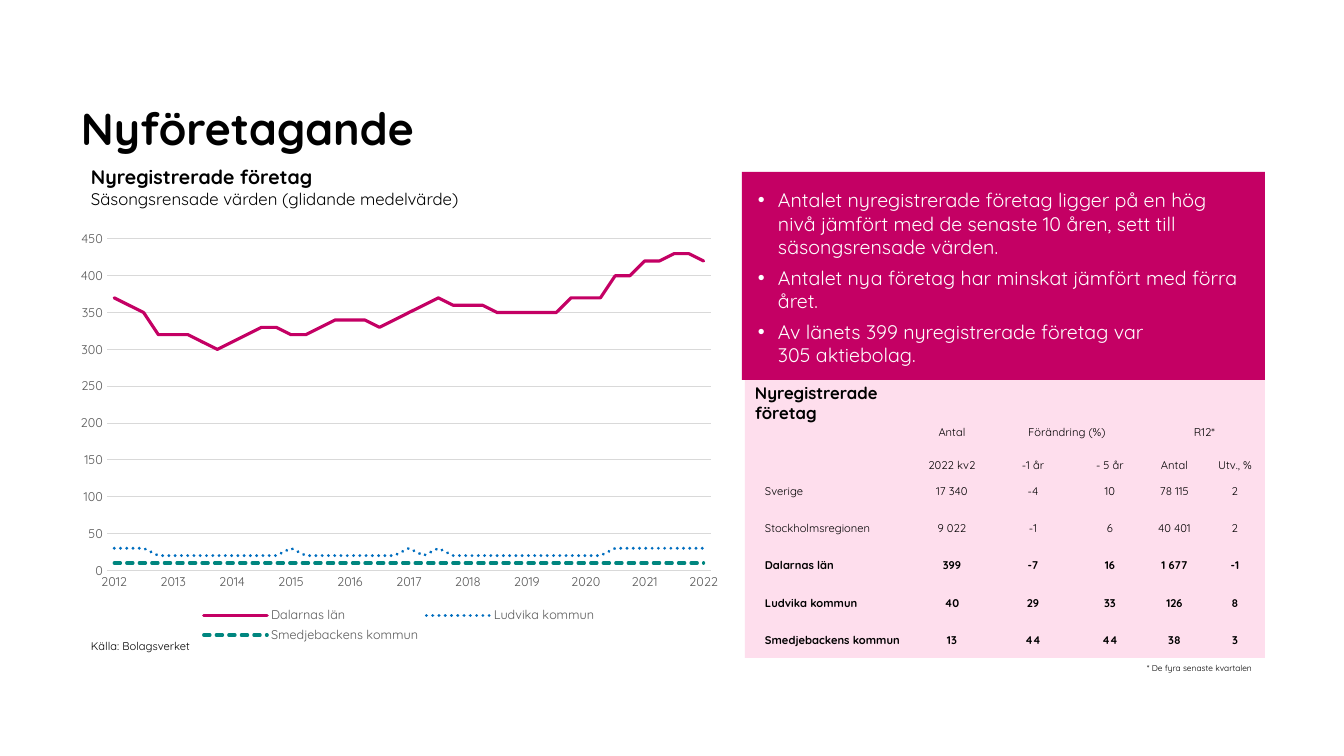
from lxml import etree
from pptx import Presentation
from pptx.chart.data import CategoryChartData
from pptx.dml.color import RGBColor
from pptx.enum.chart import XL_CHART_TYPE, XL_LEGEND_POSITION, XL_TICK_MARK
from pptx.enum.dml import MSO_LINE
from pptx.enum.shapes import MSO_SHAPE
from pptx.enum.text import MSO_ANCHOR, PP_ALIGN
from pptx.oxml import parse_xml
from pptx.oxml.ns import qn
from pptx.util import Emu, Pt

PX = 914400 / 100.8
FONT = "Quicksand"
RECT = MSO_SHAPE.RECTANGLE
LINE_CHART = XL_CHART_TYPE.LINE
BOTTOM_LEGEND = XL_LEGEND_POSITION.BOTTOM
NO_TICK = XL_TICK_MARK.NONE
DOTTED, DASHED = MSO_LINE.ROUND_DOT, MSO_LINE.SQUARE_DOT
TOP, MIDDLE, BOTTOM = MSO_ANCHOR.TOP, MSO_ANCHOR.MIDDLE, MSO_ANCHOR.BOTTOM
LEFT, CENTER = PP_ALIGN.LEFT, PP_ALIGN.CENTER
COLORS = {
    "black": "000000", "white": "FFFFFF", "pink": "FEDEED", "magenta": "C40064",
    "blue": "006EBF", "teal": "00867F", "label": "595959", "grid": "D9D9D9",
}


def px(*lengths):
    """Turn pixel lengths into EMU."""
    return [Emu(round(n * PX)) for n in lengths]


def style(font, size, color="black", bold=False):
    font.name, font.size, font.bold = FONT, Pt(size), bold
    font.color.rgb = RGBColor.from_string(COLORS[color])


prs = Presentation()
prs.slide_width, prs.slide_height = px(1344, 756)
s = prs.slides.add_slide(prs.slide_layouts[6])

# Panels on the right
panels = {}
for color, box in (("pink", (745, 378, 520, 280)), ("magenta", (742, 172, 523, 208))):
    sp = s.shapes.add_shape(RECT, *px(*box))
    sp.shadow.inherit = False
    sp.fill.solid()
    sp.fill.fore_color.rgb = RGBColor.from_string(COLORS[color])
    sp.line.fill.background()
    panels[color] = sp

bullets = [
    "Antalet nyregistrerade företag ligger på en hög nivå jämfört med "
    "de senaste 10 åren, sett till säsongsrensade värden.",
    "Antalet nya företag har minskat jämfört med förra året.",
    "Av länets 399 nyregistrerade företag var\v305 aktiebolag.",
]
tf = panels["magenta"].text_frame
tf.word_wrap, tf.vertical_anchor = True, TOP
tf.margin_left, tf.margin_top, tf.margin_right, tf.margin_bottom = px(16, 16, 16, 16)
indent = px(20)[0]
for i, text in enumerate(bullets):
    p = tf.paragraphs[0] if i == 0 else tf.add_paragraph()
    p.text = text
    p.alignment = LEFT
    p.space_before = Pt(5 if i else 0)
    pPr = p._p.get_or_add_pPr()
    pPr.set("marL", str(indent))
    pPr.set("indent", str(-indent))
    etree.SubElement(pPr, qn("a:buFont")).set("typeface", "Arial")
    etree.SubElement(pPr, qn("a:buChar")).set("char", "•")
    for r in p.runs:
        style(r.font, 14, "white")

# Title and labels: box, wrap, lines of (text, size, bold)
labels = [
    ((81, 31, 929, 123), True, [("Nyföretagande", 32, True)]),
    ((81, 634, 127, 24), False, [("Källa: Bolagsverket", 8, False)]),
    ((745, 378, 206, 30), True, [("Nyregistrerade företag", 12, True)]),
    ((1137, 658, 130, 20), False, [("* De fyra senaste kvartalen", 6, False)]),
    ((81, 160, 416, 54), False, [("Nyregistrerade företag", 14, True),
                                 ("Säsongsrensade värden (glidande medelvärde)", 12, False)]),
]
for box, wrap, lines in labels:
    tf = s.shapes.add_textbox(*px(*box)).text_frame
    tf.word_wrap = wrap
    if lines[0][0] == "Nyföretagande":
        tf.vertical_anchor = BOTTOM
        tf.margin_left = tf.margin_top = tf.margin_right = tf.margin_bottom = 0
    p = tf.paragraphs[0]
    for i, (text, size, bold) in enumerate(lines):
        if i:
            p.add_line_break()
        r = p.add_run()
        r.text = text
        style(r.font, size, bold=bold)

# Key figures table
rows = [
    ["", "Antal", "Förändring (%)", "", "R12*", ""],
    ["", "2022 kv2", "-1 år", "- 5 år", "Antal", "Utv., %"],
    ["Sverige", "17 340", "-4", "10", "78 115", "2"],
    ["Stockholmsregionen", "9 022", "-1", "6", "40 401", "2"],
    ["Dalarnas län", "399", "-7", "16", "1 677", "-1"],
    ["Ludvika kommun", "40", "29", "33", "126", "8"],
    ["Smedjebackens kommun", "13", "44", "44", "38", "3"],
]
table = s.shapes.add_table(7, 6, *px(745, 408, 520, 250)).table
table.first_row = table.horz_banding = False
NO_STYLE = "{2D5ABB26-0587-4C30-8999-92F81FD0307C}"
table._tbl.tblPr.find(qn("a:tableStyleId")).text = NO_STYLE
for column, width in zip(table.columns, px(169, 76, 86, 68, 61, 60)):
    column.width = width
for row, height in zip(table.rows, px(31, 33, 37, 37, 38, 37, 37)):
    row.height = height
for i, values in enumerate(rows):
    for j, text in enumerate(values):
        cell = table.cell(i, j)
        cell.fill.background()
        cell.vertical_anchor = BOTTOM if i < 2 else MIDDLE
        cell.margin_left, cell.margin_top, cell.margin_right, cell.margin_bottom = px(
            1 if j else 20, 1, 1, 0)
        p = cell.text_frame.paragraphs[0]
        p.text = text
        p.alignment = CENTER if j else LEFT
        for r in p.runs:
            style(r.font, 8, bold=i >= 4)
        if not text:
            etree.SubElement(p._p, qn("a:endParaRPr")).set("sz", "800")
for j in (2, 4):
    table.cell(0, j).merge(table.cell(0, j + 1))

# Line chart, quarterly values
series = [
    ("Dalarnas län", "magenta", None,
     [370, 360, 350, 320, 320, 320, 310, 300, 310, 320, 330, 330, 320, 320, 330, 340, 340, 340,
      330, 340, 350, 360, 370, 360, 360, 360, 350, 350, 350, 350, 350, 370, 370, 370, 400, 400,
      420, 420, 430, 430, 420]),
    ("Ludvika kommun", "blue", DOTTED,
     [30] * 3 + [20] * 9 + [30] + [20] * 7 + [30, 20, 30] + [20] * 11 + [30] * 7),
    ("Smedjebackens kommun", "teal", DASHED, [10] * 41),
]
data = CategoryChartData()
data.categories = ["" if q % 4 else str(2012 + q // 4) for q in range(41)]
for name, _, _, values in series:
    data.add_series(name, values)
chart = s.shapes.add_chart(LINE_CHART, *px(67, 222, 664, 425), data).chart
style(chart.font, 10)
chart.has_title = False
chart.has_legend = True
chart.legend.position = BOTTOM_LEGEND
chart.legend.include_in_layout = False
style(chart.legend.font, 9, "label")
plot = chart.plots[0]
plot.vary_by_categories = False
for ser, (_, color, dash, _) in zip(plot.series, series):
    ser.smooth = False
    line = ser.format.line
    line.width = Pt(2.25)
    line.color.rgb = RGBColor.from_string(COLORS[color])
    if dash:
        line.dash_style = dash
    ser._element.spPr.find(qn("a:ln")).set("cap", "rnd")

years, counts = chart.category_axis, chart.value_axis
for axis in (years, counts):
    axis.major_tick_mark = axis.minor_tick_mark = NO_TICK
    style(axis.tick_labels.font, 9, "label")
counts.minimum_scale, counts.maximum_scale, counts.major_unit = 0, 450, 50
counts.has_major_gridlines = True
counts.format.line.fill.background()
for line in (years.format.line, counts.major_gridlines.format.line):
    line.width = Pt(0.75)
    line.color.rgb = RGBColor.from_string(COLORS["grid"])

NS = "http://schemas.openxmlformats.org/drawingml/2006/chart"
skip = parse_xml(f'<c:tickLblSkip xmlns:c="{NS}" val="4"/>')
years._element.find(qn("c:lblOffset")).addnext(skip)
area = chart._chartSpace.chart.plotArea
for layout in area.findall(qn("c:layout")):
    area.remove(layout)
area.insert(0, parse_xml(
    f'<c:layout xmlns:c="{NS}"><c:manualLayout><c:layoutTarget val="inner"/>'
    '<c:xMode val="edge"/><c:yMode val="edge"/><c:x val="0.06"/><c:y val="0.04"/>'
    '<c:w val="0.91"/><c:h val="0.78"/></c:manualLayout></c:layout>'))

prs.save("out.pptx")
